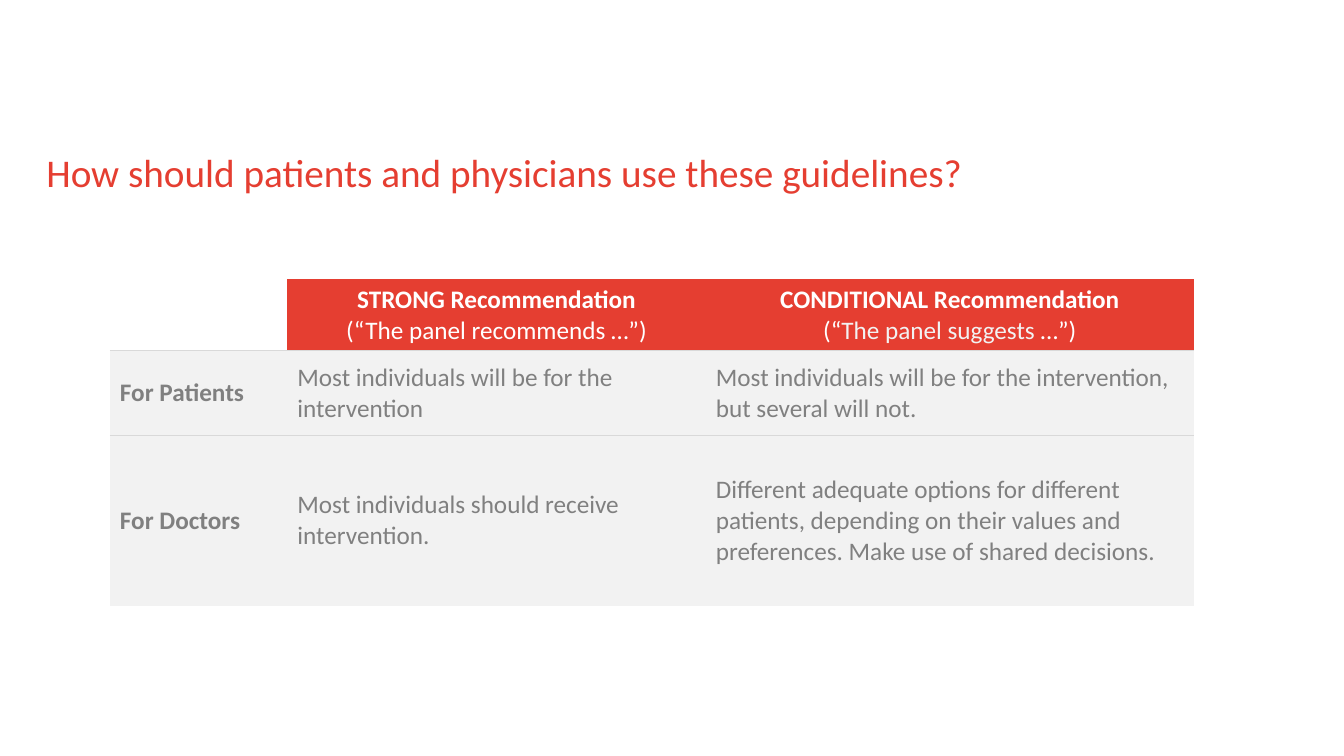
"""Build a slide on how patients and physicians use guideline recommendations."""
from dataclasses import dataclass

import lxml.etree
import pptx
import pptx.dml.color
import pptx.enum.text
import pptx.oxml
import pptx.oxml.ns
import pptx.slide
import pptx.table
import pptx.text.text
import pptx.util

Inches = pptx.util.Inches
RGBColor = pptx.dml.color.RGBColor
PP_ALIGN = pptx.enum.text.PP_ALIGN
MIDDLE = pptx.enum.text.MSO_ANCHOR.MIDDLE

RED = RGBColor(0xE5, 0x3E, 0x31)
WHITE = RGBColor(0xFF, 0xFF, 0xFF)
PALE = RGBColor(0xF2, 0xF2, 0xF2)
GREY = RGBColor(0x80, 0x80, 0x80)
RULE = RGBColor(0xD9, 0xD9, 0xD9)
PLAIN_STYLE = "{2D5ABB26-0587-4C30-8999-92F81FD0307C}"
COLUMN_WIDTHS = (1.76, 4.15, 4.84)


@dataclass(frozen=True)
class Recommendation:
    strength: str
    verb: str
    verb_color: RGBColor


@dataclass(frozen=True)
class Audience:
    name: str
    advice: tuple[str, ...]
    height: float


RECOMMENDATIONS = (
    Recommendation("STRONG", "recommends", WHITE),
    Recommendation("CONDITIONAL", "suggests", PALE),
)
AUDIENCES = (
    Audience("For Patients", (
        "Most individuals will be for the intervention",
        "Most individuals will be for the intervention, but several will not.",
    ), 0.84),
    Audience("For Doctors", (
        "Most individuals should receive intervention.",
        "Different adequate options for different patients, depending on their "
        "values and preferences. Make use of shared decisions.",
    ), 1.69),
)


def write(paragraph: pptx.text.text._Paragraph, text: str, *, color: RGBColor,
          size: float = 18, bold: bool = False,
          align: PP_ALIGN = PP_ALIGN.LEFT) -> None:
    paragraph.alignment = align
    run = paragraph.add_run()
    run.text = text
    run.font.name = "Calibri"
    run.font.size = pptx.util.Pt(size)
    run.font.bold = bold
    run.font.color.rgb = color


def add_rule(cell: pptx.table._Cell, side: str) -> None:
    cell._tc.get_or_add_tcPr().append(pptx.oxml.parse_xml(
        f'<a:{side} {pptx.oxml.ns.nsdecls("a")} w="12700"><a:solidFill>'
        f'<a:srgbClr val="{RULE}"/></a:solidFill></a:{side}>'))


def prepare(cell: pptx.table._Cell, fill: RGBColor) -> None:
    cell.fill.solid()
    cell.fill.fore_color.rgb = fill
    cell.vertical_anchor = MIDDLE


def add_title(slide: pptx.slide.Slide) -> None:
    title = slide.shapes.title
    title.left, title.top = Inches(0.46), Inches(1.47)
    title.width, title.height = Inches(12), Inches(0.46)
    frame = title.text_frame
    frame.margin_left = frame.margin_right = 0
    frame.margin_top = frame.margin_bottom = 0
    frame.vertical_anchor = MIDDLE
    frame.auto_size = pptx.enum.text.MSO_AUTO_SIZE.NONE
    write(frame.paragraphs[0], "How should patients and physicians use these guidelines?",
          color=RED, size=28)


def fill_header(cell: pptx.table._Cell, item: Recommendation) -> None:
    prepare(cell, RED)
    frame = cell.text_frame
    write(frame.paragraphs[0], f"{item.strength} Recommendation",
          color=WHITE, bold=True, align=PP_ALIGN.CENTER)
    quote = frame.add_paragraph()
    for text, color in (("(“", WHITE), (f"The panel {item.verb} ", item.verb_color),
                        ("…”)", WHITE)):
        write(quote, text, color=color, align=PP_ALIGN.CENTER)


def add_guidance(slide: pptx.slide.Slide) -> None:
    heights = (0.68, *(audience.height for audience in AUDIENCES))
    guidance = slide.shapes.add_table(
        len(heights), len(COLUMN_WIDTHS), Inches(1.09), Inches(2.77),
        Inches(sum(COLUMN_WIDTHS)), Inches(sum(heights))).table
    guidance.first_row = guidance.horz_banding = False
    guidance._tbl.tblPr.find(pptx.oxml.ns.qn("a:tableStyleId")).text = PLAIN_STYLE
    for column, width in zip(guidance.columns, COLUMN_WIDTHS):
        column.width = Inches(width)
    last = len(heights) - 1
    for index, height in enumerate(heights):
        guidance.rows[index].height = Inches(height)
        for cell in guidance.rows[index].cells:
            if index > 0:
                add_rule(cell, "lnT")
            if index < last:
                add_rule(cell, "lnB")
    for column, item in enumerate(RECOMMENDATIONS, start=1):
        fill_header(guidance.cell(0, column), item)
    for row, audience in enumerate(AUDIENCES, start=1):
        for column, text in enumerate((audience.name, *audience.advice)):
            cell = guidance.cell(row, column)
            prepare(cell, PALE)
            write(cell.text_frame.paragraphs[0], text, color=GREY, bold=column == 0)


def main() -> None:
    deck = pptx.Presentation()
    deck.slide_width, deck.slide_height = Inches(13.33), Inches(7.5)
    slide = deck.slides.add_slide(deck.slide_layouts.get_by_name("Title Only"))
    add_title(slide)
    add_guidance(slide)
    deck.save("out.pptx")


if __name__ == "__main__":
    main()
